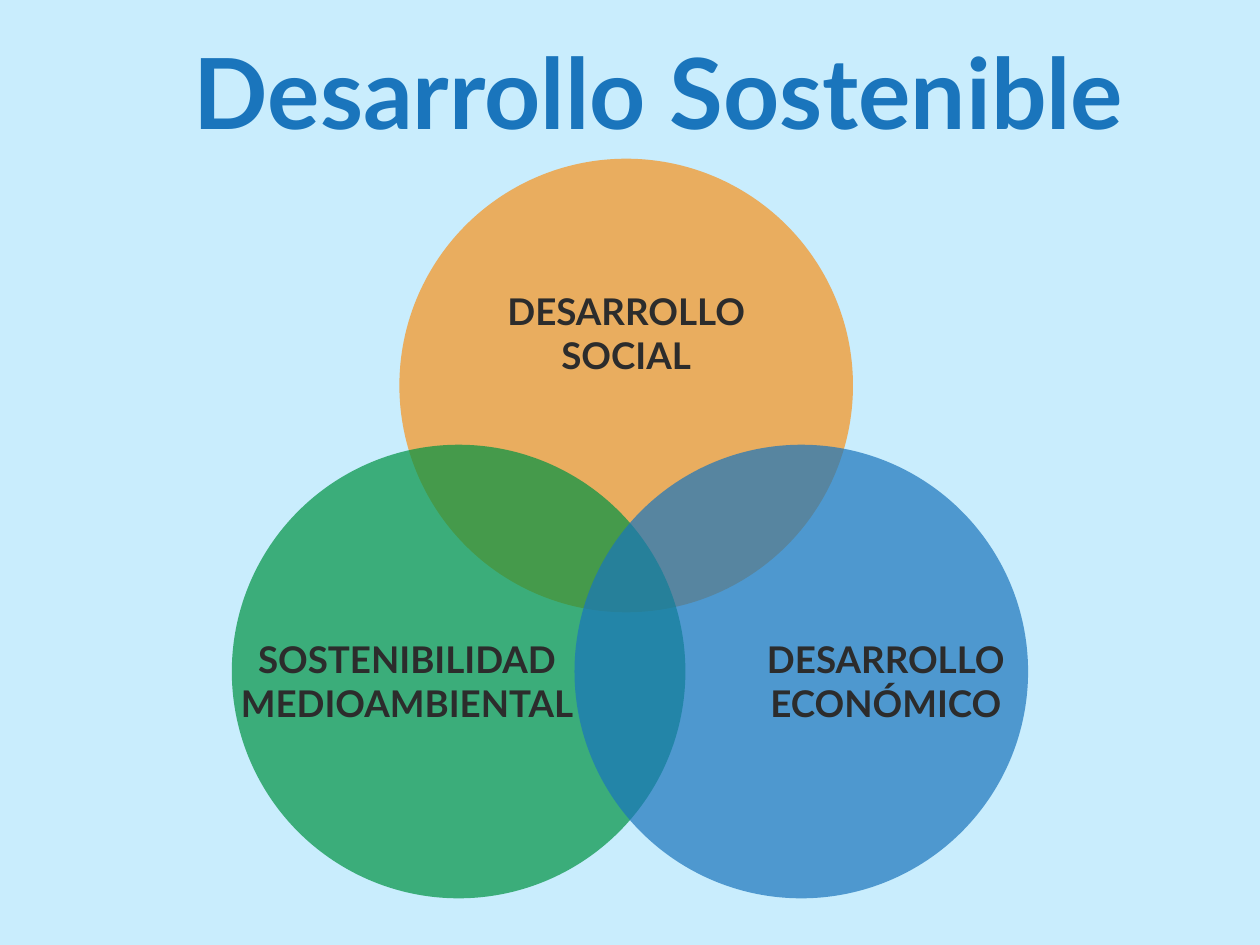
from lxml import etree
from pptx import Presentation
from pptx.dml.color import RGBColor
from pptx.enum.shapes import MSO_SHAPE
from pptx.enum.text import MSO_ANCHOR, MSO_AUTO_SIZE, PP_ALIGN
from pptx.oxml.ns import qn
from pptx.util import Inches, Pt

COLORS = {
    "background": "C9EDFD",
    "title": "1A75BC",
    "label": "2C2C2C",
    "social": "F7921C",
    "environment": "009343",
    "economy": "1A75BC",
}
DIAMETER = 3.6
OPACITY = 70


def write_text(box, text, size, color):
    frame = box.text_frame
    frame.word_wrap = True
    frame.auto_size = MSO_AUTO_SIZE.NONE
    frame.vertical_anchor = MSO_ANCHOR.TOP
    frame.margin_left = frame.margin_right = Inches(0.08)
    frame.margin_top = frame.margin_bottom = Inches(0.04)
    paragraph = frame.paragraphs[0]
    paragraph.alignment = PP_ALIGN.CENTER
    run = paragraph.add_run()
    run.text = text
    run.font.name = "Lato"
    run.font.size = Pt(size)
    run.font.bold = True
    run.font.color.rgb = RGBColor.from_string(COLORS[color])


prs = Presentation()
prs.slide_width = Inches(10)
prs.slide_height = Inches(7.5)
slide = prs.slides.add_slide(prs.slide_layouts[5])
slide.background.fill.solid()
slide.background.fill.fore_color.rgb = RGBColor.from_string(COLORS["background"])

heading = slide.shapes.title
heading.left, heading.top = Inches(0.98), Inches(0.21)
heading.width, heading.height = Inches(8.5), Inches(1.01)
write_text(heading, "Desarrollo Sostenible", 56, "title")

for pillar, left, top in [
    ("social", 3.17, 1.26),
    ("environment", 1.84, 3.53),
    ("economy", 4.56, 3.53),
]:
    circle = slide.shapes.add_shape(
        MSO_SHAPE.OVAL, Inches(left), Inches(top), Inches(DIAMETER), Inches(DIAMETER)
    )
    circle.shadow.inherit = False
    circle.line.fill.background()
    circle.fill.solid()
    circle.fill.fore_color.rgb = RGBColor.from_string(COLORS[pillar])
    tint = circle.fill._xPr.find(qn("a:solidFill"))[0]
    etree.SubElement(tint, qn("a:alpha"), val=str(OPACITY * 1000))

for text, left, top, width in [
    ("DESARROLLO SOCIAL", 3.42, 2.25, 3.1),
    ("SOSTENIBILIDAD MEDIOAMBIENTAL", 1.79, 5.01, 2.88),
    ("DESARROLLO ECONÓMICO", 5.74, 5.01, 2.58),
]:
    label = slide.shapes.add_textbox(Inches(left), Inches(top), Inches(width), Inches(0.78))
    write_text(label, text, 21, "label")

prs.save("out.pptx")
